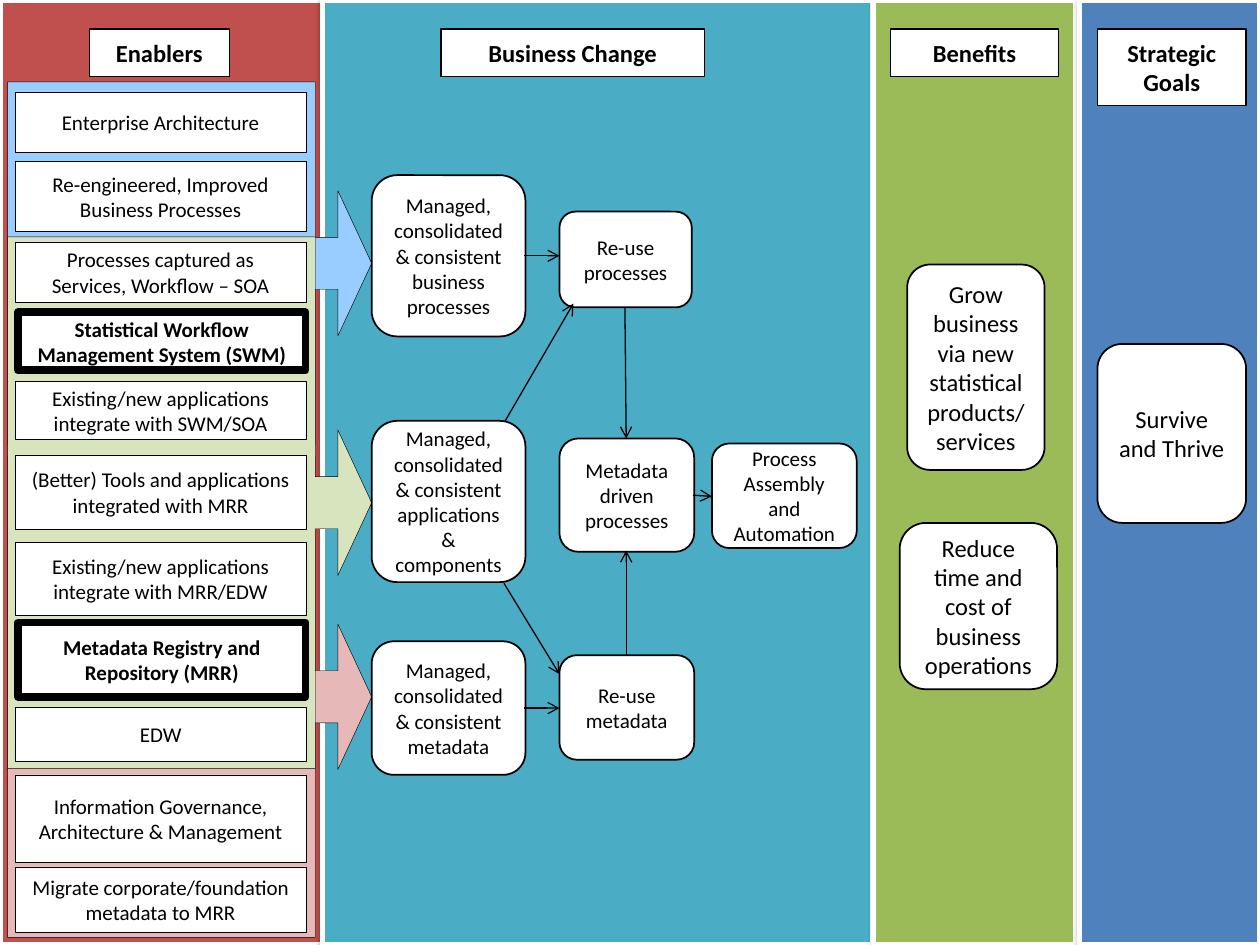
from lxml import etree
from pptx import Presentation
from pptx import util as u
from pptx.dml.color import RGBColor
from pptx.enum import shapes, text
from pptx.oxml import ns

WHITE = RGBColor(0xFF, 0xFF, 0xFF)
BLACK = RGBColor(0x00, 0x00, 0x00)
RED = RGBColor(0xC0, 0x50, 0x4D)
TEAL = RGBColor(0x4B, 0xAC, 0xC6)
GREEN = RGBColor(0x9B, 0xBB, 0x59)
BLUE = RGBColor(0x4F, 0x81, 0xBD)
SKY = RGBColor(0x99, 0xCC, 0xFF)
ROSE = RGBColor(0xE6, 0xB9, 0xB8)
LIME = RGBColor(0xD7, 0xE4, 0xBD)

COLS, ROWS = 100, 75
FORM = shapes.MSO_SHAPE

PANELS = [(0, 25.6, RED), (25.6, 43.7, TEAL), (69.3, 16.1, GREEN), (85.7, 14.3, BLUE)]
HEADS = [
    (7.1, 11.1, 3.8, "Enablers"),
    (35, 20.9, 3.8, "Business Change"),
    (70.7, 13.3, 3.8, "Benefits"),
    (87.1, 11.8, 6.1, "Strategic Goals"),
]
GROUPS = [(6.5, 28.8, SKY), (36.2, 38.2, ROSE), (18.8, 42.2, LIME)]
ITEMS = [
    (7.3, 4.8, "Enterprise Architecture"),
    (12.8, 5.6, "Re-engineered, Improved Business Processes"),
    (19.2, 4.8, "Processes captured as Services, Workflow – SOA"),
    (30.3, 4.6, "Existing/new applications integrate with SWM/SOA"),
    (36.1, 5.9, "(Better) Tools and applications integrated with MRR"),
    (43, 5.8, "Existing/new applications integrate with MRR/EDW"),
    (56.1, 4.3, "EDW"),
    (61.5, 6.9, "Information Governance, Architecture & Management"),
    (68.8, 5.2, "Migrate corporate/foundation metadata to MRR"),
]
KEYS = [
    (24.8, 4.6, "Statistical Workflow Management System (SWM)"),
    (49.4, 5.9, "Metadata Registry and Repository (MRR)"),
]
STEPS = [
    (29.5, 13.9, 12.2, 12.8, "Managed, consolidated & consistent business processes"),
    (29.5, 33.4, 12.2, 12.8, "Managed, consolidated & consistent applications & components"),
    (29.5, 50.9, 12.2, 10.6, "Managed, consolidated & consistent metadata"),
    (44.4, 16.8, 10.5, 7.6, "Re-use processes"),
    (44.4, 34.8, 10.7, 9, "Metadata driven processes"),
    (44.4, 52, 10.7, 8.3, "Re-use metadata"),
    (56.5, 35.2, 11.5, 8.3, "Process Assembly and\nAutomation"),
]
GOALS = [
    (72, 21, 10.9, 16.3, "Grow business via new statistical products/services"),
    (71.4, 41.5, 12.5, 13.2, "Reduce time and cost of business operations"),
    (87.1, 27.3, 11.8, 14.2, "Survive and Thrive"),
]
LINKS = [
    (41.6, 20.3, 44.4, 20.3),
    (41.6, 56.2, 44.4, 56.2),
    (55, 39.3, 56.5, 39.4),
    (49.6, 24.4, 49.7, 34.8),
    (49.7, 52, 49.7, 43.7),
    (40.1, 33.4, 45.5, 24.1),
    (40, 46.3, 44.4, 53.5),
]


def add(node, tag, **attrs):
    return etree.SubElement(node, ns.qn(tag), attrs)


class Board:
    """Draws styled elements on one slide, placed by grid columns and rows."""

    def __init__(self, deck):
        self.slide = deck.slides.add_slide(deck.slide_layouts[6])
        self.col = deck.slide_width / COLS
        self.row = deck.slide_height / ROWS
        self.font = "Calibri"

    def spot(self, x, y):
        return round(x * self.col), round(y * self.row)

    def shape(self, form, x, y, w, h, fill=WHITE, line=BLACK, width=0.25):
        item = self.slide.shapes.add_shape(form, *self.spot(x, y), *self.spot(w, h))
        item.shadow.inherit = False
        item.fill.solid()
        item.fill.fore_color.rgb = fill
        item.line.color.rgb = line
        item.line.width = u.Pt(width)
        return item

    def label(self, item, words, size=12, bold=False):
        frame = item.text_frame
        frame.word_wrap = True
        frame.vertical_anchor = text.MSO_ANCHOR.MIDDLE
        for n, line in enumerate(words.split("\n")):
            para = frame.add_paragraph() if n else frame.paragraphs[0]
            para.alignment = text.PP_ALIGN.CENTER
            run = para.add_run()
            run.text = line
            run.font.name = self.font
            run.font.size = u.Pt(size)
            run.font.bold = bold
            run.font.color.rgb = BLACK
        return frame

    def panel(self, x, w, fill):
        item = self.shape(FORM.RECTANGLE, x, 0, w, ROWS, fill, WHITE, 3)
        effects = item.element.spPr.find(ns.qn("a:effectLst"))
        shade = add(effects, "a:outerShdw", blurRad=str(u.Pt(3.1)), dist=str(u.Pt(1.6)),
                    dir="5400000", rotWithShape="0")
        tint = add(shade, "a:srgbClr", val=str(BLACK))
        add(tint, "a:alpha", val="38000")

    def head(self, x, w, h, words):
        item = self.shape(FORM.RECTANGLE, x, 2.3, w, h, width=0.75)
        frame = self.label(item, words, 14, True)
        frame.vertical_anchor = text.MSO_ANCHOR.TOP
        frame.margin_left = frame.margin_right = u.Inches(0.14)
        frame.margin_top = frame.margin_bottom = u.Inches(0.07)
        frame.auto_size = text.MSO_AUTO_SIZE.SHAPE_TO_FIT_TEXT

    def group(self, y, h, fill):
        item = self.shape(FORM.RIGHT_ARROW_CALLOUT, 0.6, y, 28.9, h, fill)
        for n, part in enumerate((0.143, 0.2, 0.093, 0.845)):
            item.adjustments[n] = part

    def item(self, y, h, words):
        self.label(self.shape(FORM.RECTANGLE, 1.2, y, 23.1, h), words)

    def key(self, y, h, words):
        box = self.shape(FORM.RECTANGLE, 1.45, y, 22.8, h, width=4.5)
        self.label(box, words, bold=True)

    def step(self, x, y, w, h, words, size=12):
        box = self.shape(FORM.ROUNDED_RECTANGLE, x, y, w, h, width=1)
        self.label(box, words, size)

    def link(self, x1, y1, x2, y2):
        wire = self.slide.shapes.add_connector(
            shapes.MSO_CONNECTOR.STRAIGHT, *self.spot(x1, y1), *self.spot(x2, y2))
        wire.line.color.rgb = BLACK
        wire.line.width = u.Pt(0.75)
        props = wire.element.spPr
        add(props.find(ns.qn("a:ln")), "a:tailEnd", type="arrow")
        add(props, "a:effectLst")


def main():
    deck = Presentation()
    deck.slide_width, deck.slide_height = u.Inches(10), u.Inches(7.5)
    board = Board(deck)
    layers = [
        (board.panel, PANELS), (board.head, HEADS), (board.group, GROUPS),
        (board.item, ITEMS), (board.key, KEYS), (board.step, STEPS),
    ]
    for draw, rows in layers:
        for row in rows:
            draw(*row)
    for goal in GOALS:
        board.step(*goal, size=14)
    for link in LINKS:
        board.link(*link)
    deck.save("out.pptx")


if __name__ == "__main__":
    main()
